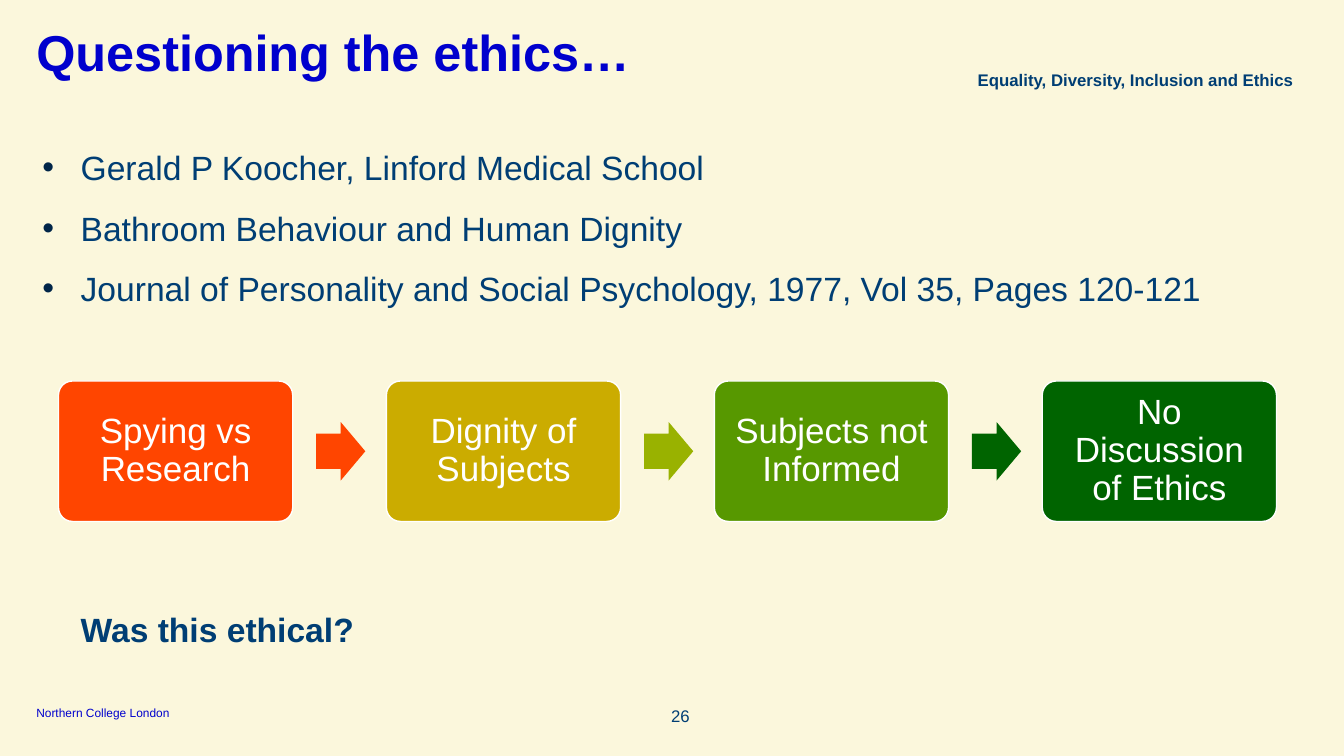
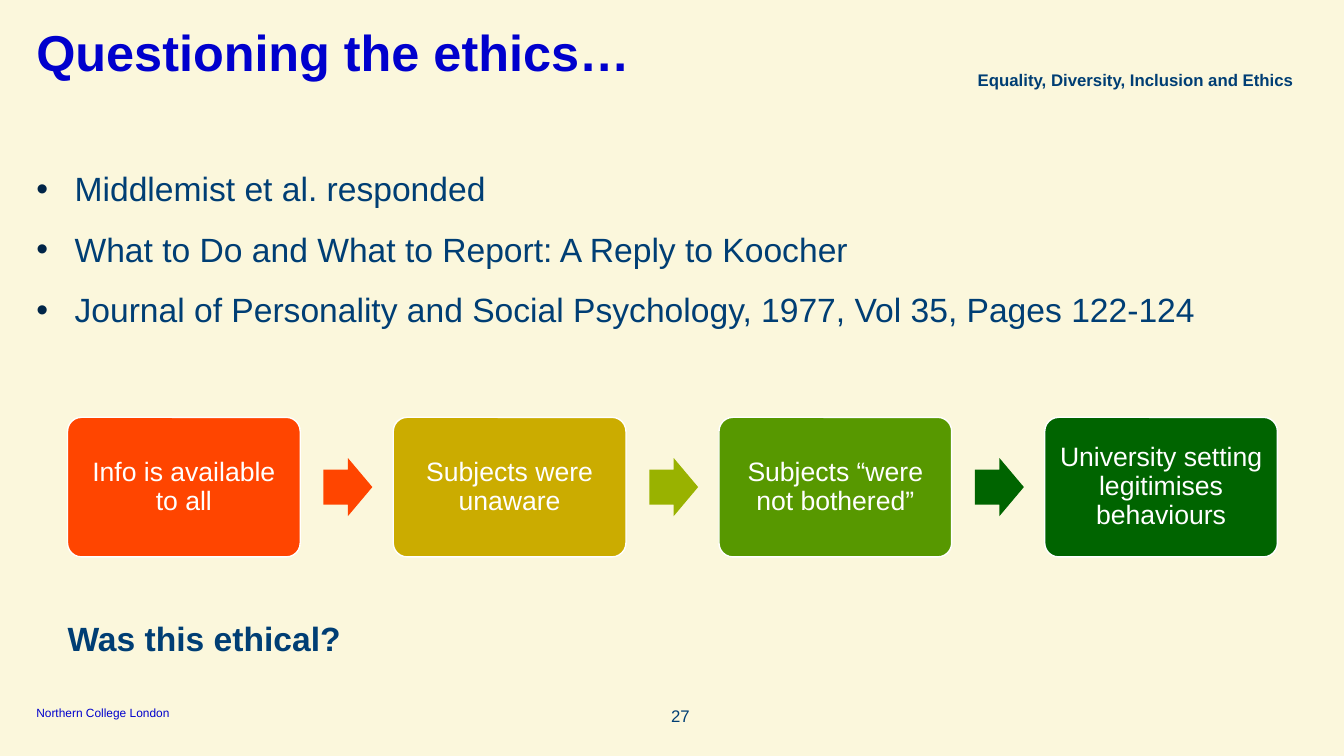
from lxml import etree
from pptx import Presentation
from pptx.dml.color import RGBColor
from pptx.enum.shapes import MSO_SHAPE
from pptx.enum.text import MSO_ANCHOR, PP_ALIGN
from pptx.oxml.ns import qn
from pptx.util import Inches, Pt

ROUND_RECT, RIGHT_ARROW = MSO_SHAPE.ROUNDED_RECTANGLE, MSO_SHAPE.RIGHT_ARROW
LEFT, CENTER, RIGHT = PP_ALIGN.LEFT, PP_ALIGN.CENTER, PP_ALIGN.RIGHT
TOP, MIDDLE, BOTTOM = MSO_ANCHOR.TOP, MSO_ANCHOR.MIDDLE, MSO_ANCHOR.BOTTOM

FONT = "Arial"
CREAM, WHITE = "FBF7DC", "FFFFFF"
BLUE, NAVY, BULLET = "0000CD", "003E74", "002548"
STEP_FILLS = ["FF4500", "CBAC00", "579800", "006400"]
ARROW_FILLS = ["FF4500", "99B200", "006400"]
BULLET_INDENT = 0.38

TITLE = "Questioning the ethics…"
TOPIC = "Equality, Diversity, Inclusion and Ethics"
FOOTER = "Northern College London"
QUESTION = "Was this ethical?"

SLIDES = [
    {
        "number": 26,
        "bullets": [
            "Gerald P Koocher, Linford Medical School",
            "Bathroom Behaviour and Human Dignity",
            "Journal of Personality and Social Psychology, 1977, Vol 35, Pages 120-121",
        ],
        "bullets_at": (0.42, 1.26),
        "steps": [
            "Spying vs Research",
            "Dignity of Subjects",
            "Subjects not Informed",
            "No Discussion of Ethics",
        ],
        "steps_at": (0.58, 3.78, 12.08),
        "step_size": 25,
        "step_inset": 0.1,
        "question_at": (0.8, 6.04),
    },
    {
        "number": 27,
        "bullets": [
            "Middlemist et al. responded",
            "What to Do and What to Report: A Reply to Koocher",
            "Journal of Personality and Social Psychology, 1977, Vol 35, Pages 122-124",
        ],
        "bullets_at": (0.36, 1.47),
        "steps": [
            "Info is available to all",
            "Subjects were unaware",
            "Subjects “were not bothered”",
            "University setting legitimises behaviours",
        ],
        "steps_at": (0.67, 4.14, 12),
        "step_size": 19,
        "step_inset": 0.08,
        "question_at": (0.67, 6.13),
    },
]


def rgb(value):
    return RGBColor.from_string(value)


def set_frame(tf, inset=0, anchor=TOP):
    tf.word_wrap = True
    tf.vertical_anchor = anchor
    tf.margin_left = tf.margin_right = Inches(inset)
    tf.margin_top = tf.margin_bottom = Inches(inset)


def write(p, text, size, color, bold=False, align=LEFT, spacing=1.0):
    p.alignment = align
    p.line_spacing = spacing
    r = p.add_run()
    r.text = text
    font = r.font
    font.name, font.size, font.bold = FONT, Pt(size), bold
    font.color.rgb = rgb(color)


def add_bullet(p):
    """Give a paragraph a hanging indent and a coloured bullet."""
    pPr = p._p.get_or_add_pPr()
    pPr.set("marL", str(Inches(BULLET_INDENT)))
    pPr.set("indent", str(-Inches(BULLET_INDENT)))
    color = etree.SubElement(pPr, qn("a:buClr"))
    etree.SubElement(color, qn("a:srgbClr"), val=BULLET)
    etree.SubElement(pPr, qn("a:buFont"), typeface=FONT)
    etree.SubElement(pPr, qn("a:buChar"), char="•")


def add_frame(slide, x, y, w, h, anchor=TOP):
    sp = slide.shapes.add_textbox(Inches(x), Inches(y), Inches(w), Inches(h))
    set_frame(sp.text_frame, anchor=anchor)
    return sp.text_frame


def add_label(slide, box, text, size, color, anchor=TOP, **style):
    """Add a text box of one paragraph and return that paragraph."""
    p = add_frame(slide, *box, anchor=anchor).paragraphs[0]
    write(p, text, size, color, **style)
    return p


def add_filled(slide, kind, x, y, w, h, fill, adjustments):
    sp = slide.shapes.add_shape(kind, Inches(x), Inches(y), Inches(w), Inches(h))
    sp.shadow.inherit = False
    sp.fill.solid()
    sp.fill.fore_color.rgb = rgb(fill)
    sp.line.fill.background()
    for i, value in enumerate(adjustments):
        sp.adjustments[i] = value
    return sp


def add_shared_parts(slide, number):
    """Set the background, title, topic, footer and page number."""
    slide.background.fill.solid()
    slide.background.fill.fore_color.rgb = rgb(CREAM)
    add_label(slide, (0.36, 6.99, 1.55, 0.15), FOOTER, 8.5, BLUE, anchor=BOTTOM)
    add_label(slide, (0.36, 0.28, 12.62, 0.41), TITLE, 36, BLUE,
              bold=True, spacing=0.9)
    add_label(slide, (6.49, 6.99, 0.35, 0.15), str(number), 12, NAVY,
              align=RIGHT, spacing=1.05)
    add_label(slide, (9.41, 0.68, 3.42, 0.34), TOPIC, 12, NAVY,
              bold=True, align=RIGHT, spacing=1.05)


def add_bullets(slide, x, y, items):
    tf = add_frame(slide, x, y, 12.62, 1.18)
    for i, item in enumerate(items):
        p = tf.add_paragraph() if i else tf.paragraphs[0]
        write(p, item, 24, NAVY, spacing=1.5)
        add_bullet(p)


def add_process(slide, x, y, width, steps, size, inset):
    """Lay out boxes with arrows between; all parts scale with the box width."""
    gap_ratio = 0.4
    w = width / (len(steps) + gap_ratio * (len(steps) - 1))
    h = 0.6 * w
    arrow_w, arrow_h = 0.21 * w, 0.25 * w
    for i, step in enumerate(steps):
        left = x + i * (1 + gap_ratio) * w
        sp = add_filled(slide, ROUND_RECT, left, y, w, h, STEP_FILLS[i], [0.1])
        sp.line.color.rgb = rgb(WHITE)
        sp.line.width = Pt(1)
        set_frame(sp.text_frame, inset, MIDDLE)
        write(sp.text_frame.paragraphs[0], step, size, WHITE,
              align=CENTER, spacing=0.9)
        if i < len(steps) - 1:
            add_filled(slide, RIGHT_ARROW, left + 1.1 * w, y + (h - arrow_h) / 2,
                       arrow_w, arrow_h, ARROW_FILLS[i], [0.6, 0.5])


def add_question(slide, x, y):
    p = add_label(slide, (x, y, 8.37, 0.64), QUESTION, 24, NAVY, bold=True)
    p.space_before = Pt(5)


def build_slide(prs, content):
    slide = prs.slides.add_slide(prs.slide_layouts[6])
    add_shared_parts(slide, content["number"])
    add_bullets(slide, *content["bullets_at"], content["bullets"])
    add_process(slide, *content["steps_at"], content["steps"],
                content["step_size"], content["step_inset"])
    add_question(slide, *content["question_at"])


def main():
    prs = Presentation()
    prs.slide_width, prs.slide_height = Inches(13.33), Inches(7.5)
    for content in SLIDES:
        build_slide(prs, content)
    prs.save("out.pptx")


if __name__ == "__main__":
    main()
